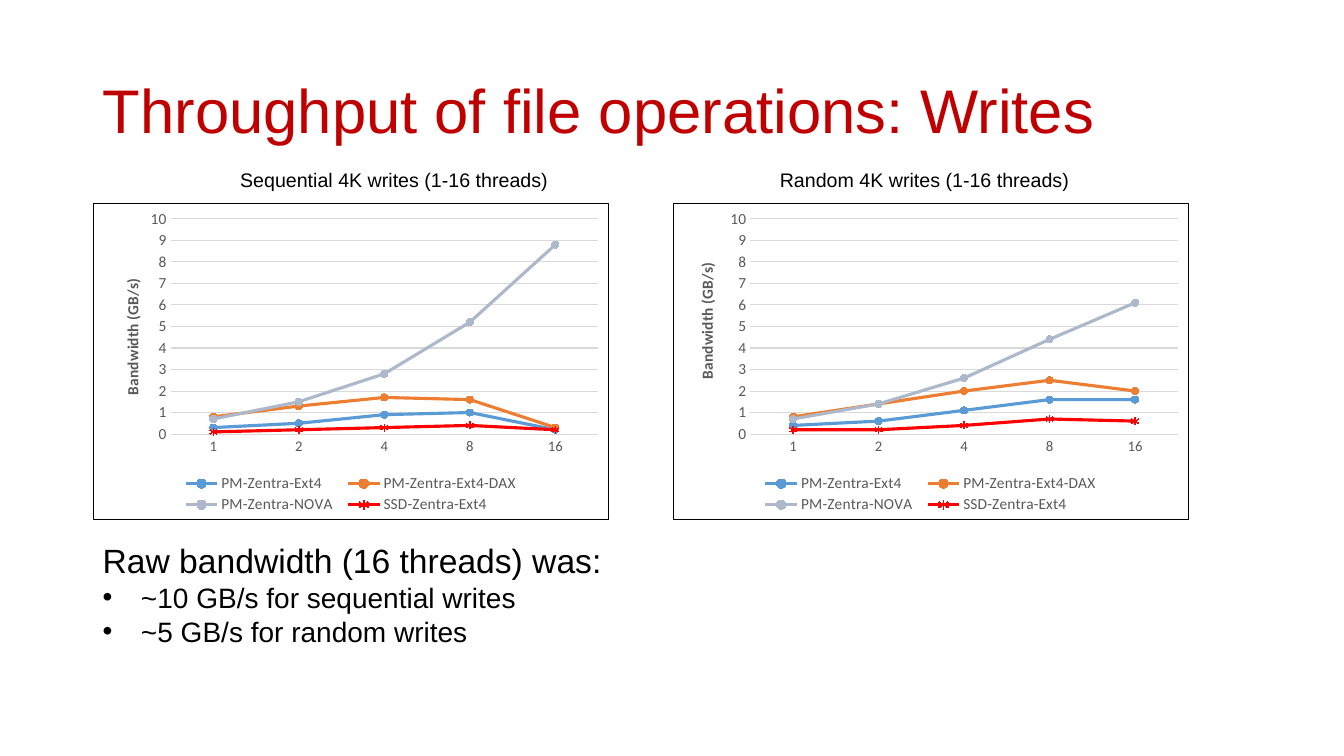
from pptx import Presentation
from pptx.chart.data import CategoryChartData
from pptx.dml.color import RGBColor
from pptx.enum.chart import XL_CHART_TYPE, XL_LEGEND_POSITION, XL_MARKER_STYLE, XL_TICK_MARK
from pptx.enum.text import MSO_ANCHOR, PP_ALIGN
from pptx.oxml import parse_xml
from pptx.oxml.ns import nsdecls
from pptx.util import Inches, Pt

LINES = XL_CHART_TYPE.LINE_MARKERS
BOTTOM = XL_LEGEND_POSITION.BOTTOM
CIRCLE, STAR = XL_MARKER_STYLE.CIRCLE, XL_MARKER_STYLE.STAR
NO_TICK = XL_TICK_MARK.NONE
LEFT, CENTER = PP_ALIGN.LEFT, PP_ALIGN.CENTER
TOP, MIDDLE = MSO_ANCHOR.TOP, MSO_ANCHOR.MIDDLE

BLACK = RGBColor(0x00, 0x00, 0x00)
CRIMSON = RGBColor(0xC0, 0x00, 0x00)
GRAY = RGBColor(0x59, 0x59, 0x59)
PALE = RGBColor(0xD9, 0xD9, 0xD9)
BLUE = RGBColor(0x5B, 0x9B, 0xD5)
ORANGE = RGBColor(0xED, 0x7D, 0x31)
STEEL = RGBColor(0xAD, 0xB9, 0xCA)
RED = RGBColor(0xFF, 0x00, 0x00)

THREADS = ["1", "2", "4", "8", "16"]
SERIES = [
    ("PM-Zentra-Ext4", BLUE, CIRCLE),
    ("PM-Zentra-Ext4-DAX", ORANGE, CIRCLE),
    ("PM-Zentra-NOVA", STEEL, CIRCLE),
    ("SSD-Zentra-Ext4", RED, STAR),
]
PANELS = [
    {"box": (0.92, 2.01, 5.12, 3.15), "shift": 1.19, "label": (0.05, 0.23),
     "caption": "Sequential 4K writes (1-16 threads)",
     "rows": [(0.3, 0.5, 0.9, 1, 0.2), (0.8, 1.3, 1.7, 1.6, 0.3),
              (0.7, 1.5, 2.8, 5.2, 8.8), (0.1, 0.2, 0.3, 0.4, 0.2)]},
    {"box": (6.67, 2.01, 5.12, 3.15), "shift": 0.7, "label": (0.04, 0.18),
     "caption": "Random 4K writes (1-16 threads)",
     "rows": [(0.4, 0.6, 1.1, 1.6, 1.6), (0.8, 1.4, 2, 2.5, 2),
              (0.7, 1.4, 2.6, 4.4, 6.1), (0.2, 0.2, 0.4, 0.7, 0.6)]},
]
NOTES = [
    ("Raw bandwidth (16 threads) was:", 24, False),
    ("~10 GB/s for sequential writes", 20, True),
    ("~5 GB/s for random writes", 20, True),
]


def style(item, **values):
    """Set each named attribute on an item."""
    for name, value in values.items():
        setattr(item, name, value)


def paint(font, size, color, face="Arial"):
    """Give a font its size, colour and face."""
    style(font, size=Pt(size), name=face)
    font.color.rgb = color


def stroke(line, color, width):
    """Give a line its colour and width."""
    line.color.rgb = color
    line.width = Pt(width)


def bullet(para):
    """Hang a round bullet before a paragraph."""
    props = para._p.get_or_add_pPr()
    style_of = {"marL": Inches(0.38), "indent": Inches(-0.38)}
    for name, value in style_of.items():
        props.set(name, str(value))
    props.append(parse_xml(f'<a:buFont {nsdecls("a")} typeface="Arial"/>'))
    props.append(parse_xml(f'<a:buChar {nsdecls("a")} char="•"/>'))


def write(slide, box, rows, color=BLACK, align=LEFT, anchor=TOP, spread=1.0):
    """Place a text box holding rows of text, size and bullet flag."""
    frame = slide.shapes.add_textbox(*map(Inches, box)).text_frame
    style(frame, word_wrap=True, vertical_anchor=anchor)
    for place, (text, size, dot) in enumerate(rows):
        para = frame.add_paragraph() if place else frame.paragraphs[0]
        if dot:
            bullet(para)
        style(para, alignment=align, line_spacing=spread)
        run = para.add_run()
        run.text = text
        paint(run.font, size, color)


def locate(part, target=None, **places):
    """Give a chart part a manual layout in fractions of the chart."""
    modes = {"xMode": "edge", "yMode": "edge"}
    target = {"layoutTarget": target} if target else {}
    marks = "".join(f'<c:{key} val="{value}"/>'
                    for key, value in (target | modes | places).items())
    layout = parse_xml(f'<c:layout {nsdecls("c")}><c:manualLayout>{marks}'
                       '</c:manualLayout></c:layout>')
    for old in part.xpath("c:layout"):
        part.remove(old)
    ahead = part.xpath("c:tx | c:legendPos | c:legendEntry")
    if ahead:
        ahead[-1].addnext(layout)
    else:
        part.insert(0, layout)


def frame_chart(chart):
    """Draw a thin black border round a white chart."""
    border = parse_xml(
        f'<c:spPr {nsdecls("c", "a")}><a:solidFill><a:srgbClr val="FFFFFF"/></a:solidFill>'
        f'<a:ln w="{Pt(0.75)}"><a:solidFill><a:srgbClr val="{BLACK}"/></a:solidFill></a:ln></c:spPr>')
    chart._chartSpace.xpath("c:chart")[0].addnext(border)


def set_axes(chart, label):
    """Format both axes, the grid and the value label."""
    across, up = chart.category_axis, chart.value_axis
    for axis, size in ((across, 10.5), (up, 11)):
        style(axis, major_tick_mark=NO_TICK, minor_tick_mark=NO_TICK)
        paint(axis.tick_labels.font, size, GRAY, "Calibri")
    stroke(across.format.line, PALE, 0.75)
    up.format.line.fill.background()
    style(up, minimum_scale=0, maximum_scale=10, major_unit=1, has_major_gridlines=True)
    stroke(up.major_gridlines.format.line, PALE, 0.75)
    style(up.tick_labels, number_format="0", number_format_is_linked=False)
    up.axis_title.text_frame.text = "Bandwidth (GB/s)"
    paint(up.axis_title.text_frame.paragraphs[0].runs[0].font, 11, GRAY, "Calibri")
    locate(up.axis_title._element, x=label[0], y=label[1])


def add_panel(slide, box, shift, label, caption, rows):
    """Place a line chart in a box with its caption above."""
    left, top, wide, high = box
    data = CategoryChartData(number_format="0.0")
    data.categories = THREADS
    for (name, _, _), row in zip(SERIES, rows):
        data.add_series(name, row)
    chart = slide.shapes.add_chart(LINES, *map(Inches, box), data).chart
    paint(chart.font, 10, BLACK, "Calibri")
    frame_chart(chart)
    style(chart, has_title=False, has_legend=True)
    style(chart.legend, position=BOTTOM, include_in_layout=False)
    paint(chart.legend.font, 11, GRAY, "Calibri")
    set_axes(chart, label)
    locate(chart.legend._element, x=0.16, y=0.85, w=0.68, h=0.14)
    locate(chart._chartSpace.xpath("c:chart/c:plotArea")[0], "inner",
           x=0.15, y=0.05, w=0.83, h=0.68)
    chart.plots[0].vary_by_categories = False
    for line, (_, color, shape) in zip(chart.plots[0].series, SERIES):
        line.smooth = False
        stroke(line.format.line, color, 2.25)
        style(line.marker, style=shape, size=5)
        stroke(line.marker.format.line, color, 0.75)
        if shape == STAR:
            line.marker.format.fill.background()
        else:
            line.marker.format.fill.solid()
            line.marker.format.fill.fore_color.rgb = color
    write(slide, (left + shift, top - 0.39, 3.6, 0.34), [(caption, 14, False)], align=CENTER)


def main():
    """Build and save the slide."""
    deck = Presentation()
    style(deck, slide_width=Inches(13.33), slide_height=Inches(7.5))
    slide = deck.slides.add_slide(deck.slide_layouts[6])
    write(slide, (0.92, 0.4, 11.5, 1.45),
          [("Throughput of file operations: Writes", 44, False)], CRIMSON, anchor=MIDDLE, spread=0.9)
    for panel in PANELS:
        add_panel(slide, **panel)
    write(slide, (0.92, 5.31, 9.92, 1.18), NOTES)
    deck.save("out.pptx")


if __name__ == "__main__":
    main()
